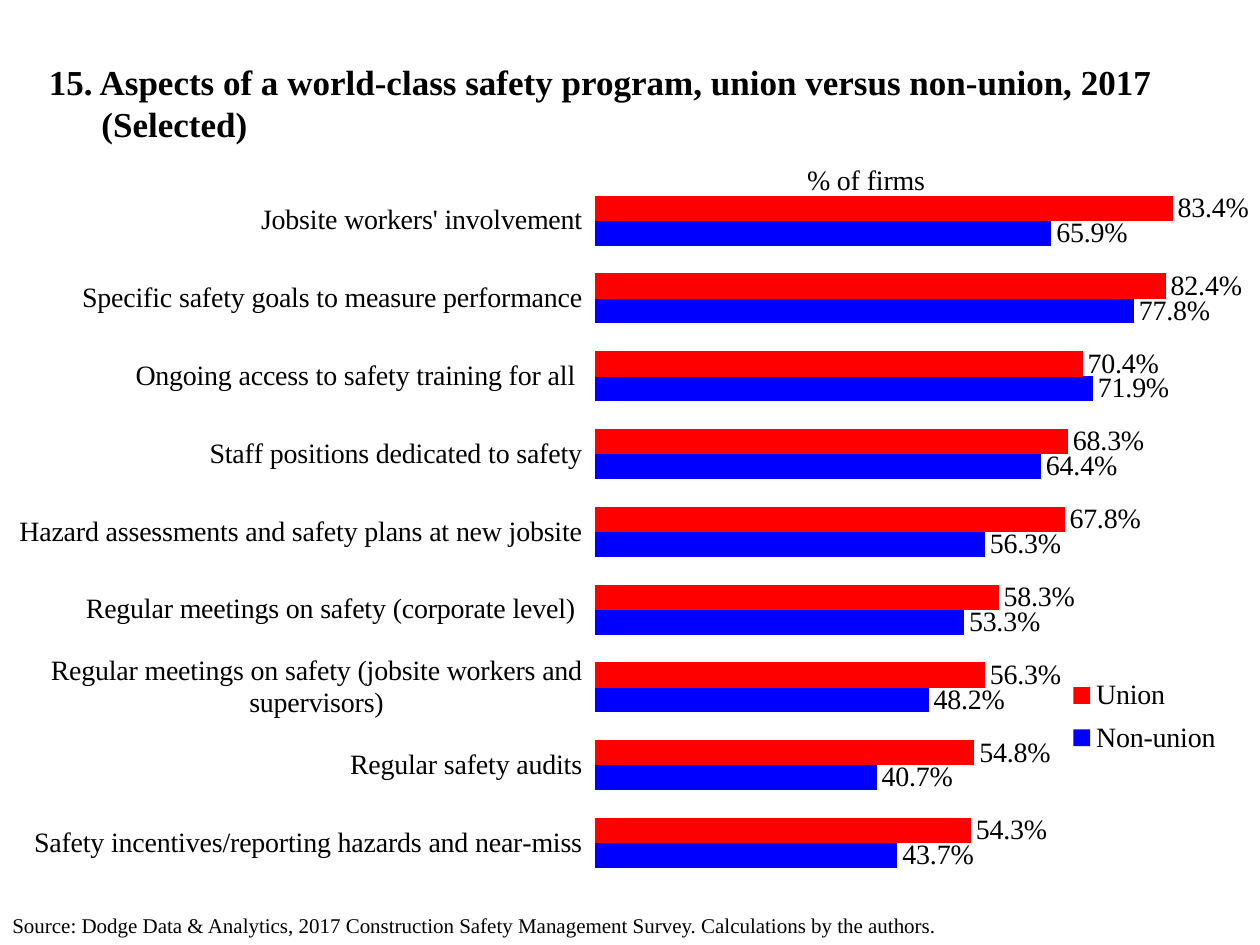
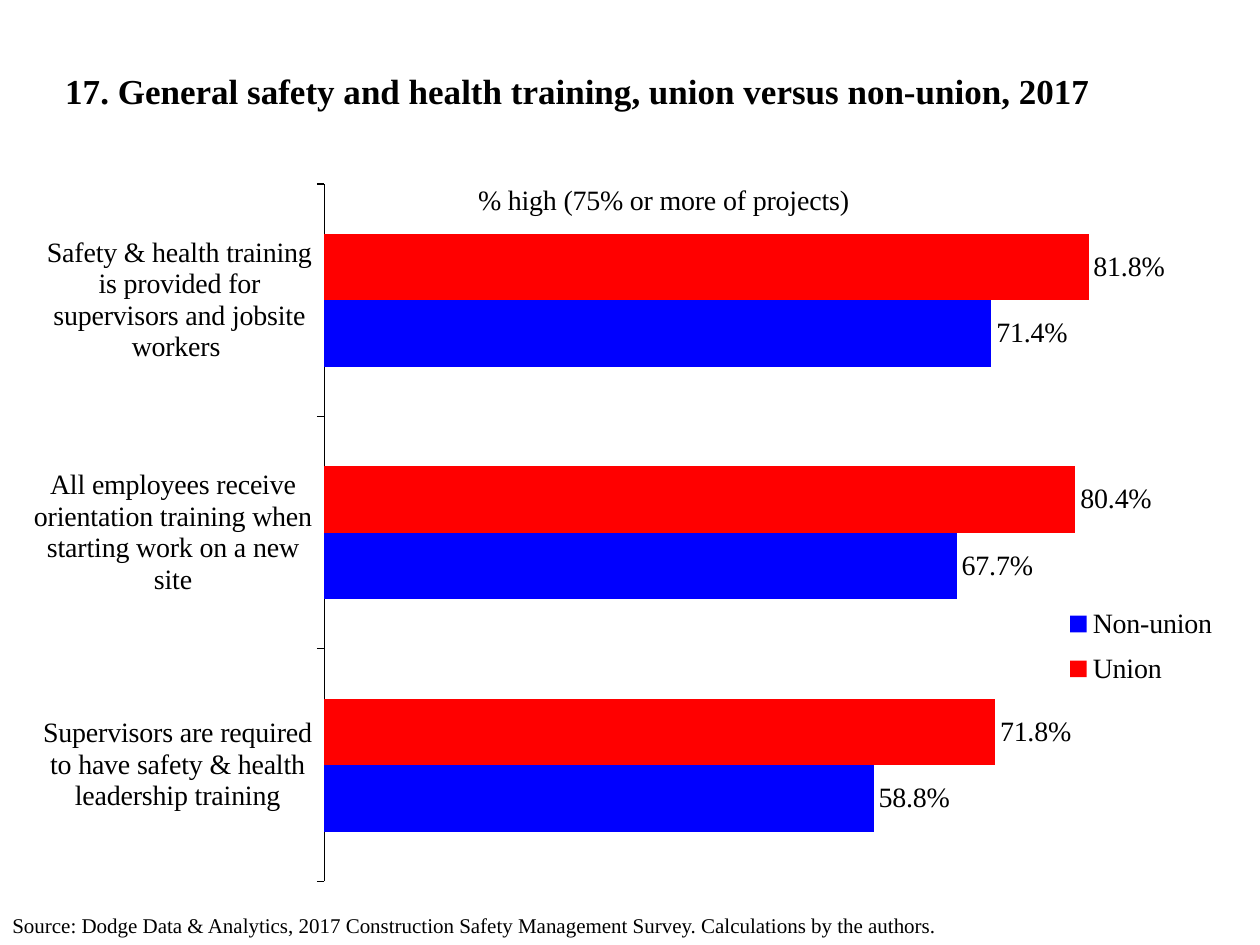
from dataclasses import dataclass

from lxml import etree
from pptx import Presentation
from pptx.chart.data import CategoryChartData
from pptx.dml.color import RGBColor
from pptx.enum.chart import XL_CHART_TYPE as Chart, XL_LABEL_POSITION as LabelPos
from pptx.enum.chart import XL_LEGEND_POSITION as LegendPos, XL_TICK_MARK as Tick
from pptx.enum.chart import XL_TICK_LABEL_POSITION as TickPos
from pptx.enum.text import MSO_ANCHOR as Anchor
from pptx.oxml.ns import qn
from pptx.util import Pt


@dataclass(frozen=True)
class Theme:
    """Colours, font and type sizes of the deck."""
    font: str = "Times New Roman"
    ink: RGBColor = RGBColor(0, 0, 0)
    union: RGBColor = RGBColor(255, 0, 0)
    non_union: RGBColor = RGBColor(0, 0, 255)
    title: int = 20
    chart: int = 16
    source: int = 12


THEME = Theme()
COLORS = {"Union": THEME.union, "Non-union": THEME.non_union}
SOURCE = ("Source: Dodge Data & Analytics, 2017 Construction Safety Management Survey. "
          "Calculations by the authors.")

ASPECTS = dict(
    title="15. Aspects of a world-class safety program, union versus non-union, 2017\v(Selected)",
    title_box=(20.9, 33, 678, 51),
    chart_box=(5.8, 84.2, 707.8, 419.8),
    measure="% of firms",
    categories=["Safety incentives/reporting hazards and near-miss",
                "Regular safety audits",
                "Regular meetings on safety (jobsite workers and supervisors)",
                "Regular meetings on safety (corporate level) ",
                "Hazard assessments and safety plans at new jobsite",
                "Staff positions dedicated to safety",
                "Ongoing access to safety training for all ",
                "Specific safety goals to measure performance",
                "Jobsite workers' involvement"],
    series={"Non-union": (0.437, 0.407, 0.482, 0.533, 0.563, 0.644, 0.719, 0.778, 0.659),
            "Union": (0.543, 0.548, 0.563, 0.583, 0.678, 0.683, 0.704, 0.824, 0.834)},
    gap=110, overlap=2, top_down=False, axis_line=False,
    plot_at=(0.473, 0.047, 0.505, 0.953),
    measure_at=(0.641, 0.014),
    legend_at=(0.848, 0.71, 0.14, 0.13),
)

TRAINING = dict(
    title="17. General safety and health training, union versus non-union, 2017",
    title_box=(30.2, 31.7, 660, 40.3),
    chart_box=(19.4, 84.2, 681.1, 419.8),
    measure="% high (75% or more of projects)",
    categories=["Safety & health training is provided for supervisors and jobsite workers ",
                "All employees receive orientation training when starting work on a new site",
                "Supervisors are required to have safety & health leadership training"],
    series={"Union": (0.818, 0.804, 0.718), "Non-union": (0.714, 0.677, 0.588)},
    gap=150, overlap=0, top_down=True, axis_line=True,
    plot_at=(0.242, 0.05, 0.707, 0.95),
    measure_at=(0.367, 0.041),
    legend_at=(0.866, 0.61, 0.13, 0.14),
)


def style(font, size, bold=False):
    """Give a font the deck's face and ink."""
    font.name, font.size, font.bold = THEME.font, Pt(size), bold
    font.color.rgb = THEME.ink


def add_text(s, box, text, size, bold=False, anchor=Anchor.TOP, hanging=0):
    """Write one paragraph in a wrapping text box."""
    tf = s.shapes.add_textbox(*map(Pt, box)).text_frame
    tf.word_wrap, tf.vertical_anchor = True, anchor
    p = tf.paragraphs[0]
    p.text = text
    if hanging:
        pr = p._p.get_or_add_pPr()
        pr.set("marL", str(Pt(hanging)))
        pr.set("indent", str(-Pt(hanging)))
    style(p.font, size, bold)


def place(el, at, inner=False):
    """Fix a chart part at fractions of the chart's box."""
    for old in el.findall(qn("c:layout")):
        el.remove(old)
    layout = etree.Element(qn("c:layout"))
    manual = etree.SubElement(layout, qn("c:manualLayout"))
    values = {"layoutTarget": "inner"} if inner else {}
    values |= {"xMode": "edge", "yMode": "edge"}
    values |= dict(zip("xywh", map(str, at)))
    for tag, val in values.items():
        etree.SubElement(manual, qn(f"c:{tag}")).set("val", val)
    overlay = el.find(qn("c:overlay"))
    if overlay is None:
        el.insert(0, layout)
    else:
        overlay.addprevious(layout)


def style_axes(chart, top_down, axis_line):
    """Hide the value axis and set up the category axis."""
    val, cat = chart.value_axis, chart.category_axis
    val.minimum_scale, val.maximum_scale = 0, 0.9
    val.has_major_gridlines = val.visible = False
    cat.has_major_gridlines = False
    cat.reverse_order = top_down
    cat.tick_label_position = TickPos.LOW
    cat.major_tick_mark = Tick.OUTSIDE if axis_line else Tick.NONE
    cat.minor_tick_mark = Tick.NONE
    line = cat.format.line
    if axis_line:
        line.width = Pt(0.75)
        line.color.rgb = THEME.ink
    else:
        line.fill.background()


def style_bars(plot, gap, overlap):
    """Colour the bars and label them with percentages."""
    plot.gap_width, plot.overlap, plot.vary_by_categories = gap, overlap, False
    for ser in plot.series:
        ser.format.fill.solid()
        ser.format.fill.fore_color.rgb = COLORS[ser.name]
        ser.invert_if_negative = False
    plot.has_data_labels = True
    labels = plot.data_labels
    labels.show_value, labels.position = True, LabelPos.OUTSIDE_END
    labels.number_format, labels.number_format_is_linked = "0.0%", False
    style(labels.font, THEME.chart)


def add_comparison(s, box, d):
    """Draw the union and non-union bars with measure and legend."""
    data = CategoryChartData(number_format="0.0%")
    data.categories = d["categories"]
    for name, values in d["series"].items():
        data.add_series(name, values)
    chart = s.shapes.add_chart(Chart.BAR_CLUSTERED, *map(Pt, box), data).chart
    style(chart.font, THEME.chart)
    style_axes(chart, d["top_down"], d["axis_line"])
    style_bars(chart.plots[0], d["gap"], d["overlap"])
    place(chart._chartSpace.chart.plotArea, d["plot_at"], inner=True)

    chart.has_title = True
    p = chart.chart_title.text_frame.paragraphs[0]
    p.text = d["measure"]
    style(p.font, THEME.chart)
    title = chart.chart_title._element
    place(title, d["measure_at"])
    title.find(qn("c:overlay")).set("val", "1")

    chart.has_legend = True
    legend = chart.legend
    legend.position, legend.include_in_layout = LegendPos.RIGHT, False
    style(legend.font, THEME.chart)
    place(legend._element, d["legend_at"])


def add_chart_slide(prs, d):
    """Add a slide with title, comparison chart and source line."""
    s = prs.slides.add_slide(prs.slide_layouts[6])
    add_text(s, d["title_box"], d["title"], THEME.title, True, Anchor.MIDDLE, hanging=30)
    add_comparison(s, d["chart_box"], d)
    add_text(s, (0, 518, 720, 21.6), SOURCE, THEME.source)


def main():
    """Build and save the deck."""
    prs = Presentation()
    prs.slide_width, prs.slide_height = Pt(720), Pt(540)
    for d in (ASPECTS, TRAINING):
        add_chart_slide(prs, d)
    prs.save("out.pptx")


if __name__ == "__main__":
    main()
